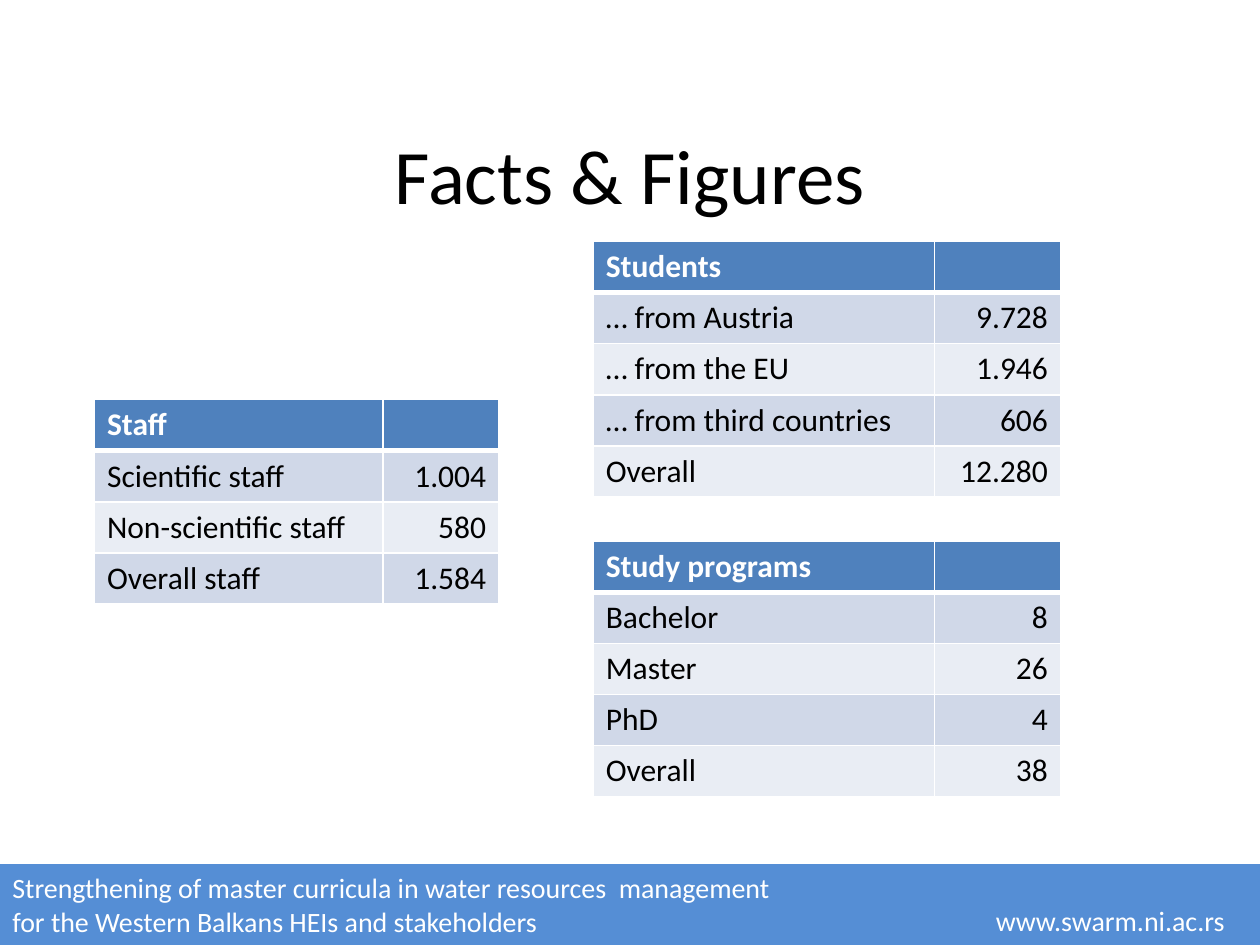
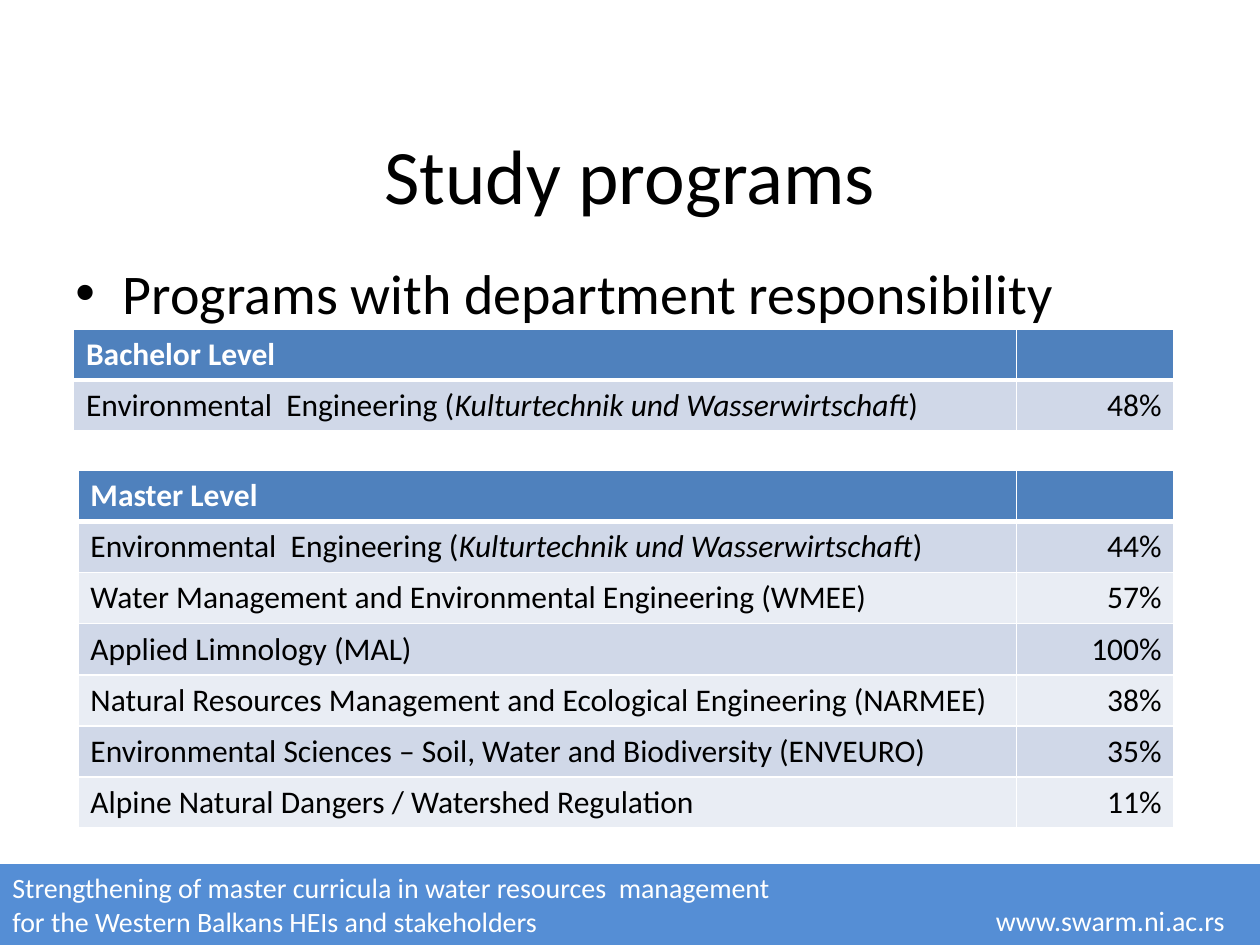
from dataclasses import dataclass

from lxml.etree import SubElement
from pptx import Presentation
from pptx.dml.color import RGBColor as Color
from pptx.enum.shapes import MSO_SHAPE as Shape
from pptx.enum.text import MSO_ANCHOR as Anchor, MSO_AUTO_SIZE as AutoSize, PP_ALIGN as Align
from pptx.oxml import parse_xml
from pptx.oxml.ns import nsdecls, qn
from pptx.util import Pt


@dataclass(frozen=True)
class Theme:
    """Colours, type sizes and measures shared by the slides."""
    font: str = "Calibri"
    text: str = "000000"
    white: str = "FFFFFF"
    footer: str = "558ED5"
    header: str = "4F81BD"
    bands: tuple = ("D0D8E8", "E9EDF4")
    title_size: int = 44
    body_size: int = 32
    table_size: int = 18
    footer_size: int = 16
    row_height: float = 29.2
    thin: int = 1
    thick: int = 3


THEME = Theme()
TITLE_BOX = (36, 66, 648, 66)
BODY_BOX = (36, 144, 648, 44)
FOOTER_BOX = (0, 494, 720, 46)
FOOTER_LINES = (
    "Strengthening of master curricula in water resources  management",
    "for the Western Balkans HEIs and stakeholders",
)
WEBSITE = "www.swarm.ni.ac.rs"
ENVIRONMENTAL = ("Environmental  Engineering (", "Kulturtechnik und Wasserwirtschaft", ")")

STAFF = ("Staff", [
    ("Scientific staff", "1.004"),
    ("Non-scientific staff", "580"),
    ("Overall staff", "1.584"),
])
STUDENTS = ("Students", [
    ("… from Austria", "9.728"),
    ("… from the EU", "1.946"),
    ("… from third countries", "606"),
    ("Overall", "12.280"),
])
PROGRAMS = ("Study programs", [
    ("Bachelor", "8"),
    ("Master", "26"),
    ("PhD", "4"),
    ("Overall", "38"),
])
BACHELOR = ("Bachelor Level", [(ENVIRONMENTAL, "48%")])
MASTER = ("Master Level", [
    (ENVIRONMENTAL, "44%"),
    ("Water Management and Environmental Engineering (WMEE)", "57%"),
    ("Applied Limnology (MAL)", "100%"),
    ("Natural Resources Management and Ecological Engineering (NARMEE)", "38%"),
    ("Environmental Sciences – Soil, Water and Biodiversity (ENVEURO)", "35%"),
    ("Alpine Natural Dangers / Watershed Regulation", "11%"),
])


def points(*lengths):
    """Turn plain numbers into point lengths."""
    return [Pt(length) for length in lengths]


def format_font(font, size, color, bold=False):
    """Apply the theme typeface with a size and colour."""
    font.name = THEME.font
    font.size = Pt(size)
    font.bold = bold
    font.color.rgb = Color.from_string(color)


def format_frame(frame, size, color):
    """Format every run of a text frame alike."""
    for paragraph in frame.paragraphs:
        for run in paragraph.runs:
            format_font(run.font, size, color)


def add_text(slide, box, text, size, color, wrap=True):
    """Add a text box and return its text frame."""
    frame = slide.shapes.add_textbox(*points(*box)).text_frame
    frame.word_wrap = wrap
    frame.text = text
    format_frame(frame, size, color)
    return frame


def add_footer(slide, box):
    """Draw the footer band with the project name and web address."""
    left, top, width, height = box
    band = slide.shapes.add_shape(Shape.FLOWCHART_PROCESS, *points(*box))
    band.shadow.inherit = False
    band.fill.solid()
    band.fill.fore_color.rgb = Color.from_string(THEME.footer)
    band.line.fill.background()
    add_text(slide, (left, top, 480, height), "\n".join(FOOTER_LINES),
             THEME.footer_size, THEME.white)
    add_text(slide, (left + width - 158, top + 19, 151, height - 19), WEBSITE,
             THEME.footer_size, THEME.white, wrap=False)


def set_title(slide, box, text):
    """Place, fill and format the title placeholder."""
    title = slide.shapes.title
    title.left, title.top, title.width, title.height = points(*box)
    frame = title.text_frame
    frame.text = text
    frame.auto_size = AutoSize.NONE
    frame.vertical_anchor = Anchor.MIDDLE
    frame.paragraphs[0].alignment = Align.CENTER
    format_frame(frame, THEME.title_size, THEME.text)


def add_bullet(slide, box, text):
    """Add a single bulleted statement."""
    frame = add_text(slide, box, text, THEME.body_size, THEME.text)
    properties = frame.paragraphs[0]._p.get_or_add_pPr()
    properties.set("marL", str(Pt(27)))
    properties.set("indent", str(-Pt(27)))
    SubElement(properties, qn("a:buFont")).set("typeface", "Arial")
    SubElement(properties, qn("a:buChar")).set("char", "•")


def set_borders(cell, top, bottom):
    """Give a cell white borders with the given top and bottom widths."""
    properties = cell._tc.get_or_add_tcPr()
    widths = {"lnL": THEME.thin, "lnR": THEME.thin, "lnT": top, "lnB": bottom}
    for position, (side, width) in enumerate(widths.items()):
        properties.insert(position, parse_xml(
            f'<a:{side} {nsdecls("a")} w="{Pt(width)}"><a:solidFill>'
            f'<a:srgbClr val="{THEME.white}"/></a:solidFill></a:{side}>'))


def fill_cell(cell, content, row, column):
    """Write and format one cell; odd parts of a tuple are italic."""
    is_header = row == 0
    paragraph = cell.text_frame.paragraphs[0]
    paragraph.alignment = Align.RIGHT if column else Align.LEFT
    color = THEME.white if is_header else THEME.text
    format_font(paragraph.font, THEME.table_size, color, is_header)
    parts = content if isinstance(content, tuple) else (content,)
    for index, part in enumerate(filter(None, parts)):
        run = paragraph.add_run()
        run.text = part
        format_font(run.font, THEME.table_size, color, is_header)
        run.font.italic = index % 2 == 1
    cell.fill.solid()
    fill = THEME.header if is_header else THEME.bands[(row - 1) % 2]
    cell.fill.fore_color.rgb = Color.from_string(fill)
    set_borders(cell, THEME.thick if row == 1 else THEME.thin,
                THEME.thick if is_header else THEME.thin)


def add_figures_table(slide, origin, widths, content):
    """Add a two-column table of labels and values under a heading."""
    heading, entries = content
    rows = [(heading, ""), *entries]
    box = (*origin, sum(widths), THEME.row_height * len(rows))
    table = slide.shapes.add_table(len(rows), len(widths), *points(*box)).table
    for column, width in zip(table.columns, widths):
        column.width = Pt(width)
    for row, values in enumerate(rows):
        table.rows[row].height = Pt(THEME.row_height)
        for column, value in enumerate(values):
            fill_cell(table.cell(row, column), value, row, column)


def add_base_slide(presentation, title):
    """Add a slide with the shared footer and title."""
    slide = presentation.slides.add_slide(presentation.slide_layouts.get_by_name("Title Only"))
    add_footer(slide, FOOTER_BOX)
    set_title(slide, TITLE_BOX, title)
    return slide


def build_facts_slide(presentation):
    """Build the overview of staff, students and study programs."""
    slide = add_base_slide(presentation, "Facts & Figures")
    add_figures_table(slide, (54, 228.4), (165, 66), STAFF)
    for top, content in ((138, STUDENTS), (309.2, PROGRAMS)):
        add_figures_table(slide, (339, top), (195, 72), content)


def build_programs_slide(presentation):
    """Build the list of programs with department responsibility."""
    slide = add_base_slide(presentation, "Study programs")
    add_bullet(slide, BODY_BOX, "Programs with department responsibility")
    add_figures_table(slide, (42, 188), (539, 90), BACHELOR)
    add_figures_table(slide, (44.5, 268.8), (536.5, 90), MASTER)


def main():
    """Create and save the presentation."""
    presentation = Presentation()
    presentation.slide_width, presentation.slide_height = points(720, 540)
    build_facts_slide(presentation)
    build_programs_slide(presentation)
    presentation.save("out.pptx")


if __name__ == "__main__":
    main()
